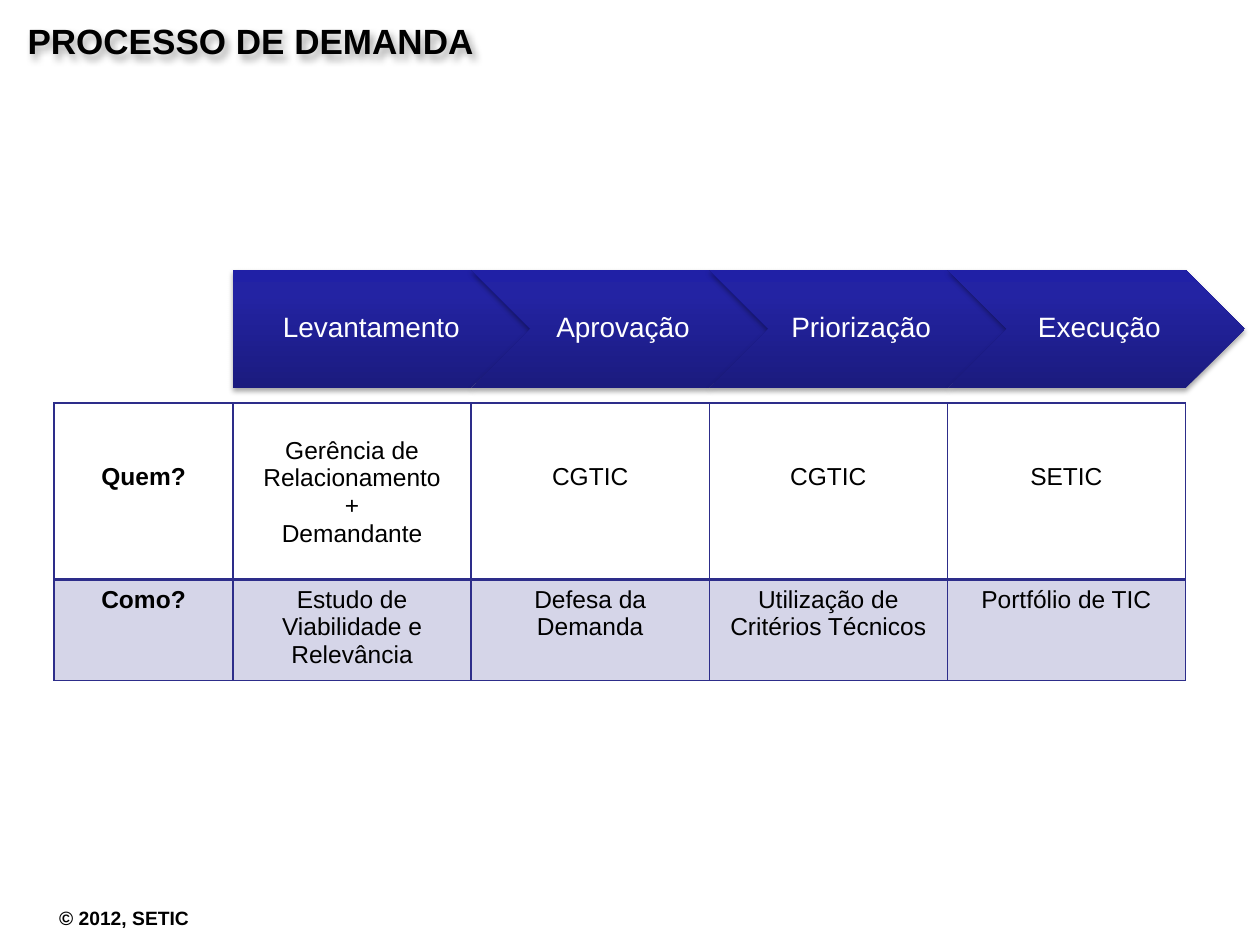
from lxml import etree
from pptx import Presentation
from pptx import util as u
from pptx.dml import color
from pptx.enum import shapes, text
from pptx.oxml import parse_xml
from pptx.oxml.ns import nsdecls

FONT, NAVY, PALE = "Arial", "2D2D8A", "D5D5E8"
STOPS = ((0, "1B1B7E"), (80, "2323A3"), (100, "2020A6"))
STEPS = ("Levantamento", "Aprovação", "Priorização", "Execução")
WHO = ("Quem?", "Gerência de\nRelacionamento\n+\nDemandante", "CGTIC", "CGTIC", "SETIC")
HOW = ("Como?", "Estudo de Viabilidade e Relevância", "Defesa da Demanda",
       "Utilização de Critérios Técnicos", "Portfólio de TIC")
LEFT, HEAD, STEP = 0.43, 1.42, 1.89


def rgb(code):
    """Turn a hex string into a colour."""
    return color.RGBColor.from_string(code)


def assign(obj, vals):
    """Set attributes from a dict of format values."""
    for key, val in vals.items():
        setattr(obj, key, val)


def write(frame, words, size, code="000000", bold=False, **para):
    """Write one paragraph per line in a common format."""
    frame.text = words
    for par in frame.paragraphs:
        assign(par, para)
        assign(par.font, {"name": FONT, "size": u.Pt(size), "bold": bold})
        par.font.color.rgb = rgb(code)


def shade(shape, blur, dist, angle):
    """Give a shape a soft black shadow."""
    shape.shadow.inherit = False
    shape._element.spPr.find("{*}effectLst").append(parse_xml(
        f'<a:outerShdw {nsdecls("a")} blurRad="{u.Pt(blur)}" dist="{u.Pt(dist)}" '
        f'dir="{angle * 60000}" algn="ctr" rotWithShape="0"><a:srgbClr val="000000">'
        '<a:alpha val="35000"/></a:srgbClr></a:outerShdw>'))


def label(slide, box, words, size, **frame):
    """Add a bold text box."""
    shape = slide.shapes.add_textbox(*map(u.Inches, box))
    assign(shape.text_frame, frame)
    write(shape.text_frame, words, size, bold=True)
    return shape


def blend(shape):
    """Fill a shape with the upward navy gradient."""
    shape.fill.gradient()
    shape.fill.gradient_angle = 90
    stops = shape._element.spPr.find(".//{*}gsLst")
    for old in list(stops):
        stops.remove(old)
    for pos, code in STOPS:
        stops.append(parse_xml(
            f'<a:gs {nsdecls("a")} pos="{pos * 1000}"><a:srgbClr val="{code}"/></a:gs>'))


def arrow(slide, num, words):
    """Add one step of the process."""
    kind = shapes.MSO_SHAPE.CHEVRON if num else shapes.MSO_SHAPE.PENTAGON
    box = (LEFT + HEAD + num * STEP, 2.14, 2.36, 0.94)
    shape = slide.shapes.add_shape(kind, *map(u.Inches, box))
    blend(shape)
    shape.line.fill.background()
    shade(shape, 3.1, 1.8, 90)
    assign(shape.text_frame, {
        "margin_left": u.Inches(0.07 if num else 0.09), "margin_right": u.Inches(0.02),
        "word_wrap": True, "vertical_anchor": text.MSO_ANCHOR.MIDDLE})
    write(shape.text_frame, words, 16, "FFFFFF",
          alignment=text.PP_ALIGN.CENTER, line_spacing=0.9)


def border(cell, widths):
    """Draw the four sides of a cell in navy."""
    props = cell._tc.get_or_add_tcPr()
    for side, width in zip("LRTB", widths):
        line = etree.SubElement(props, props.tag.replace("tcPr", "ln" + side), w=str(u.Pt(width)))
        line.append(parse_xml(
            f'<a:solidFill {nsdecls("a")}><a:srgbClr val="{NAVY}"/></a:solidFill>'))


def matrix(slide):
    """Add the table of who and how."""
    box = (LEFT, 3.2, HEAD + 4 * STEP, 2.17)
    table = slide.shapes.add_table(2, 5, *map(u.Inches, box)).table
    assign(table, {"first_row": False, "horz_banding": False})
    for col, width in zip(table.columns, [HEAD] + [STEP] * 4):
        col.width = u.Inches(width)
    for num, (row, height, words) in enumerate(zip(table.rows, (1.4, 0.77), (WHO, HOW))):
        row.height = u.Inches(height)
        for col, (cell, word) in enumerate(zip(row.cells, words)):
            border(cell, (1, 1, 1 + num, 2 - num))
            if num:
                cell.fill.solid()
                cell.fill.fore_color.rgb = rgb(PALE)
            else:
                cell.fill.background()
                cell.margin_top = u.Inches(0.27 if "\n" in word else 0.48)
            write(cell.text_frame, word, 14, bold=col == 0, alignment=text.PP_ALIGN.CENTER)


def main():
    """Build the slide and save it."""
    deck = Presentation()
    assign(deck, {"slide_width": u.Inches(10), "slide_height": u.Inches(7.5)})
    slide = deck.slides.add_slide(deck.slide_layouts[6])
    label(slide, (0.37, 7.14, 1.28, 0.29), "© 2012, SETIC", 11, word_wrap=False)
    title = label(slide, (0.12, 0.05, 7.95, 0.55), "PROCESSO DE DEMANDA", 20,
                  word_wrap=True, vertical_anchor=text.MSO_ANCHOR.MIDDLE)
    shade(title, 4, 3, 45)
    for num, words in enumerate(STEPS):
        arrow(slide, num, words)
    matrix(slide)
    deck.save("out.pptx")


if __name__ == "__main__":
    main()
